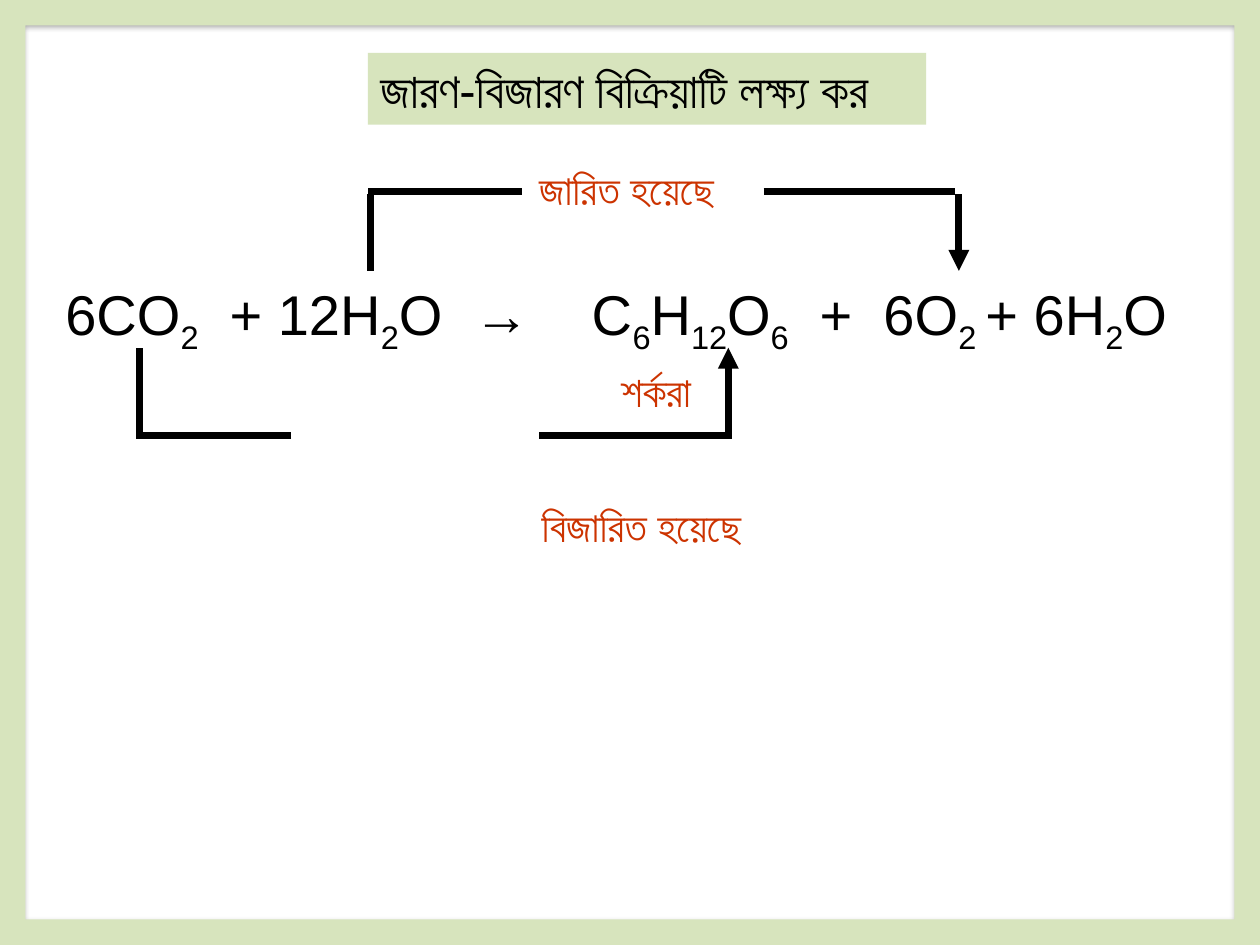
from lxml import etree
from pptx import Presentation
from pptx.dml.color import RGBColor
from pptx.enum.shapes import MSO_CONNECTOR, MSO_SHAPE
from pptx.enum.text import MSO_ANCHOR, PP_ALIGN
from pptx.oxml.ns import qn
from pptx.util import Inches, Pt

STRAIGHT = MSO_CONNECTOR.STRAIGHT
FRAME, RECT = MSO_SHAPE.FRAME, MSO_SHAPE.RECTANGLE
LEFT, TOP = PP_ALIGN.LEFT, MSO_ANCHOR.TOP
BLACK, GREEN, RED = "000000", "D7E4BD", "CC3300"


def rgb(value):
    return RGBColor.from_string(value)


def write(tf, text, size=24, color=BLACK, font="Arial", wrap=False):
    tf.word_wrap = wrap
    tf.vertical_anchor = TOP
    p = tf.paragraphs[0]
    p.alignment = LEFT
    for i, part in enumerate(text.split("|")):
        r = p.add_run()
        r.text = part
        r.font.size = Pt(size)
        r.font.name = font
        r.font.color.rgb = rgb(color)
        if i % 2:
            r._r.get_or_add_rPr().set("baseline", "-25000")


class Board:
    def __init__(self, slide, line_width=4):
        self.s = slide
        self.line_width = Pt(line_width)

    def shape(self, kind, x, y, w, h, fill):
        sp = self.s.shapes.add_shape(kind, Inches(x), Inches(y), Inches(w), Inches(h))
        sp.shadow.inherit = False
        sp.fill.solid()
        sp.fill.fore_color.rgb = rgb(fill)
        sp.line.fill.background()
        return sp

    def frame(self, w, h, thickness):
        sp = self.shape(FRAME, 0, 0, w, h, GREEN)
        sp.adjustments[0] = thickness
        effects = sp._element.spPr.find(qn("a:effectLst"))
        shadow = etree.SubElement(effects, qn("a:outerShdw"), blurRad=str(Pt(3.1)),
                                  dist=str(Pt(1.8)), dir="5400000", rotWithShape="0")
        color = etree.SubElement(shadow, qn("a:srgbClr"), val=BLACK)
        etree.SubElement(color, qn("a:alpha"), val="35000")

    def title(self, text, x, y, w, h):
        sp = self.shape(RECT, x, y, w, h, GREEN)
        write(sp.text_frame, text, size=28, wrap=True)

    def text(self, text, x, y, w, h, **style):
        sp = self.s.shapes.add_textbox(Inches(x), Inches(y), Inches(w), Inches(h))
        write(sp.text_frame, text, **style)

    def line(self, x1, y1, x2, y2, arrow=False):
        c = self.s.shapes.add_connector(STRAIGHT, Inches(x1), Inches(y1), Inches(x2), Inches(y2))
        c.line.color.rgb = rgb(BLACK)
        c.line.width = self.line_width
        etree.SubElement(c._element.spPr, qn("a:effectLst"))
        if arrow:
            etree.SubElement(c.line._get_or_add_ln(), qn("a:tailEnd"), type="triangle")

    def bracket(self, bars, legs, y, leg_y, tip_y):
        for start, end in bars:
            self.line(start, y, end, y)
        tail, head = legs
        self.line(tail, leg_y, tail, tip_y)
        self.line(head, leg_y, head, tip_y, arrow=True)


def main():
    prs = Presentation()
    prs.slide_width, prs.slide_height = Inches(10), Inches(7.5)
    board = Board(prs.slides.add_slide(prs.slide_layouts[6]))
    board.frame(10, 7.5, 0.027)
    board.text("শর্করা", 4.83, 2.85, 0.8, 0.5, color=RED)
    board.text("6CO|2|  + 12H|2|O  →    C|6|H|12|O|6|  +  6O|2 |+ 6H|2|O",
               0.42, 2.17, 9.2, 0.64, size=32)
    board.text("জারিত হয়েছে", 4.18, 1.25, 1.63, 0.5, color=RED)
    board.bracket([(4.14, 2.92), (6.06, 7.58)], (2.94, 7.61), y=1.52, leg_y=1.54, tip_y=2.15)
    board.text("বিজারিত হয়েছে", 4.2, 3.92, 1.85, 0.5, color=RED)
    board.bracket([(2.31, 1.08), (4.28, 5.81)], (1.11, 5.78), y=3.46, leg_y=3.43, tip_y=2.76)
    board.title("জারণ-বিজারণ বিক্রিয়াটি লক্ষ্য কর", 2.92, 0.42, 4.43, 0.57)
    prs.save("out.pptx")


if __name__ == "__main__":
    main()
